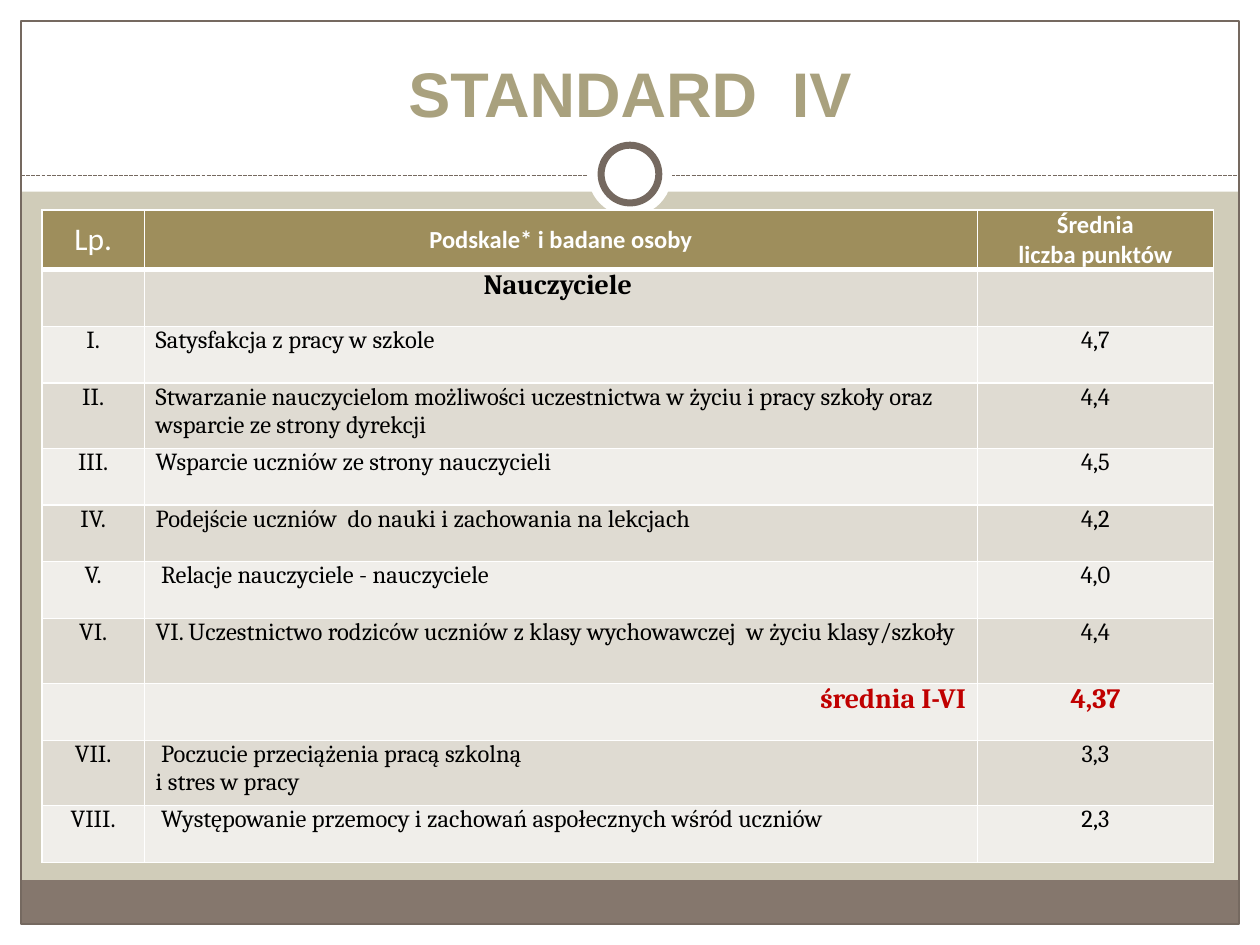
"""Builds the STANDARD IV slide with its table of teacher subscale scores."""
from dataclasses import dataclass

from lxml.etree import SubElement
from pptx import Presentation
from pptx.dml.color import RGBColor
from pptx.enum.dml import MSO_LINE
from pptx.enum.shapes import MSO_CONNECTOR, MSO_SHAPE
from pptx.enum.text import MSO_ANCHOR, PP_ALIGN
from pptx.oxml.ns import qn
from pptx.util import Pt


@dataclass(frozen=True)
class Theme:
    background: str = "D0CCB9"
    white: str = "FFFFFF"
    black: str = "000000"
    footer: str = "85776D"
    frame: str = "756960"
    title: str = "A9A17E"
    header: str = "9E8E5C"
    bands: tuple = ("F0EEEA", "DFDBD2")
    accent: str = "C00000"
    title_size: int = 36
    number_size: int = 18
    summary_size: int = 16
    body_size: int = 14


theme = Theme()


def add_panel(kind, box, fill=None, line=None, width=0.75):
    shape = slide.shapes.add_shape(kind, *map(Pt, box))
    shape.shadow.inherit = False
    if fill:
        shape.fill.solid()
        shape.fill.fore_color.rgb = RGBColor.from_string(fill)
    else:
        shape.fill.background()
    if line:
        shape.line.color.rgb = RGBColor.from_string(line)
        shape.line.width = Pt(width)
    else:
        shape.line.fill.background()


def style_font(paragraph, name, size, color, bold):
    paragraph.font.name = name
    paragraph.font.size = Pt(size)
    paragraph.font.bold = bold
    paragraph.font.color.rgb = RGBColor.from_string(color)


presentation = Presentation()
presentation.slide_width, presentation.slide_height = Pt(720), Pt(540)
slide = presentation.slides.add_slide(presentation.slide_layouts[5])
slide.background.fill.solid()
slide.background.fill.fore_color.rgb = RGBColor.from_string(theme.background)

for box in [(0, 528, 720, 12), (0, 0, 720, 109.5), (0, 0, 12, 540), (708, 0, 12, 540)]:
    add_panel(MSO_SHAPE.RECTANGLE, box, theme.white)
add_panel(MSO_SHAPE.RECTANGLE, (12, 503, 696, 25), theme.footer)
add_panel(MSO_SHAPE.RECTANGLE, (12, 12, 696, 516), line=theme.frame)

divider = slide.shapes.add_connector(MSO_CONNECTOR.STRAIGHT, Pt(12), Pt(100.5), Pt(708), Pt(100.5))
divider.line.color.rgb = RGBColor.from_string(theme.frame)
divider.line.width = Pt(0.75)
divider.line.dash_style = MSO_LINE.SQUARE_DOT
SubElement(divider.element.spPr, qn("a:effectLst"))

add_panel(MSO_SHAPE.OVAL, (336, 75.5, 48, 48), theme.white)
add_panel(MSO_SHAPE.OVAL, (343.5, 83, 33, 33), theme.white, theme.frame, 4)

title = slide.shapes.title
title.left, title.top, title.width, title.height = Pt(24), Pt(18), Pt(672), Pt(60)
title.text_frame.text = "STANDARD  IV"
title.text_frame.vertical_anchor = MSO_ANCHOR.BOTTOM
title_paragraph = title.text_frame.paragraphs[0]
title_paragraph.alignment = PP_ALIGN.CENTER
style_font(title_paragraph, "Arial", theme.title_size, theme.title, True)
title.element.getparent().append(title.element)

rows = [
    ("Lp.", "Podskale* i badane osoby", "Średnia\nliczba punktów"),
    ("", "Nauczyciele ", ""),
    ("I.", "Satysfakcja z pracy w szkole", "4,7"),
    ("II.", "Stwarzanie nauczycielom możliwości uczestnictwa w życiu i pracy szkoły oraz  "
            "wsparcie ze strony dyrekcji", "4,4"),
    ("III.", "Wsparcie uczniów ze strony nauczycieli", "4,5"),
    ("IV.", "Podejście uczniów  do nauki i zachowania na lekcjach", "4,2"),
    ("V.", " Relacje nauczyciele - nauczyciele", "4,0"),
    ("VI.", "VI. Uczestnictwo rodziców uczniów z klasy wychowawczej  w życiu klasy/szkoły", "4,4"),
    ("", "średnia I-VI", "4,37"),
    ("VII.", " Poczucie przeciążenia pracą szkolną \vi stres w pracy", "3,3"),
    ("VIII.", " Występowanie przemocy i zachowań aspołecznych wśród uczniów", "2,3"),
]
header_row, group_row, average_row = 0, 1, 8
tall_rows = (3, 7, 9)
middle_alignments = {header_row: PP_ALIGN.CENTER, group_row: PP_ALIGN.CENTER, average_row: PP_ALIGN.RIGHT}

table = slide.shapes.add_table(len(rows), 3, Pt(24), Pt(120), Pt(669.5), Pt(372)).table
for column, width in zip(table.columns, (58.5, 476, 135)):
    column.width = Pt(width)

for row_index, texts in enumerate(rows):
    table.rows[row_index].height = Pt(37.3 if row_index in tall_rows else 32.4)
    is_header = row_index == header_row
    for column_index, text in enumerate(texts):
        cell = table.cell(row_index, column_index)
        cell.margin_left = cell.margin_right = Pt(6.5)
        cell.margin_top = cell.margin_bottom = 0
        cell.vertical_anchor = MSO_ANCHOR.MIDDLE if is_header and column_index < 2 else MSO_ANCHOR.TOP

        for side in "LRTB":
            heavy = (is_header and side == "B") or (row_index == 1 and side == "T")
            border = SubElement(cell._tc.get_or_add_tcPr(), qn(f"a:ln{side}"), w=str(Pt(3 if heavy else 1)))
            SubElement(SubElement(border, qn("a:solidFill")), qn("a:srgbClr"), val=theme.white)
        cell.fill.solid()
        cell.fill.fore_color.rgb = RGBColor.from_string(theme.header if is_header else theme.bands[row_index % 2])

        if is_header:
            size = theme.number_size if column_index == 0 else theme.body_size
            look = ("Calibri", size, theme.white, column_index > 0)
        elif row_index in (group_row, average_row):
            color = theme.accent if row_index == average_row else theme.black
            look = ("Cambria", theme.summary_size, color, True)
        else:
            look = ("Cambria", theme.body_size, theme.black, False)

        cell.text_frame.text = text
        for paragraph in cell.text_frame.paragraphs:
            paragraph.alignment = (
                middle_alignments.get(row_index, PP_ALIGN.LEFT) if column_index == 1 else PP_ALIGN.CENTER
            )
            style_font(paragraph, *look)

presentation.save("out.pptx")
